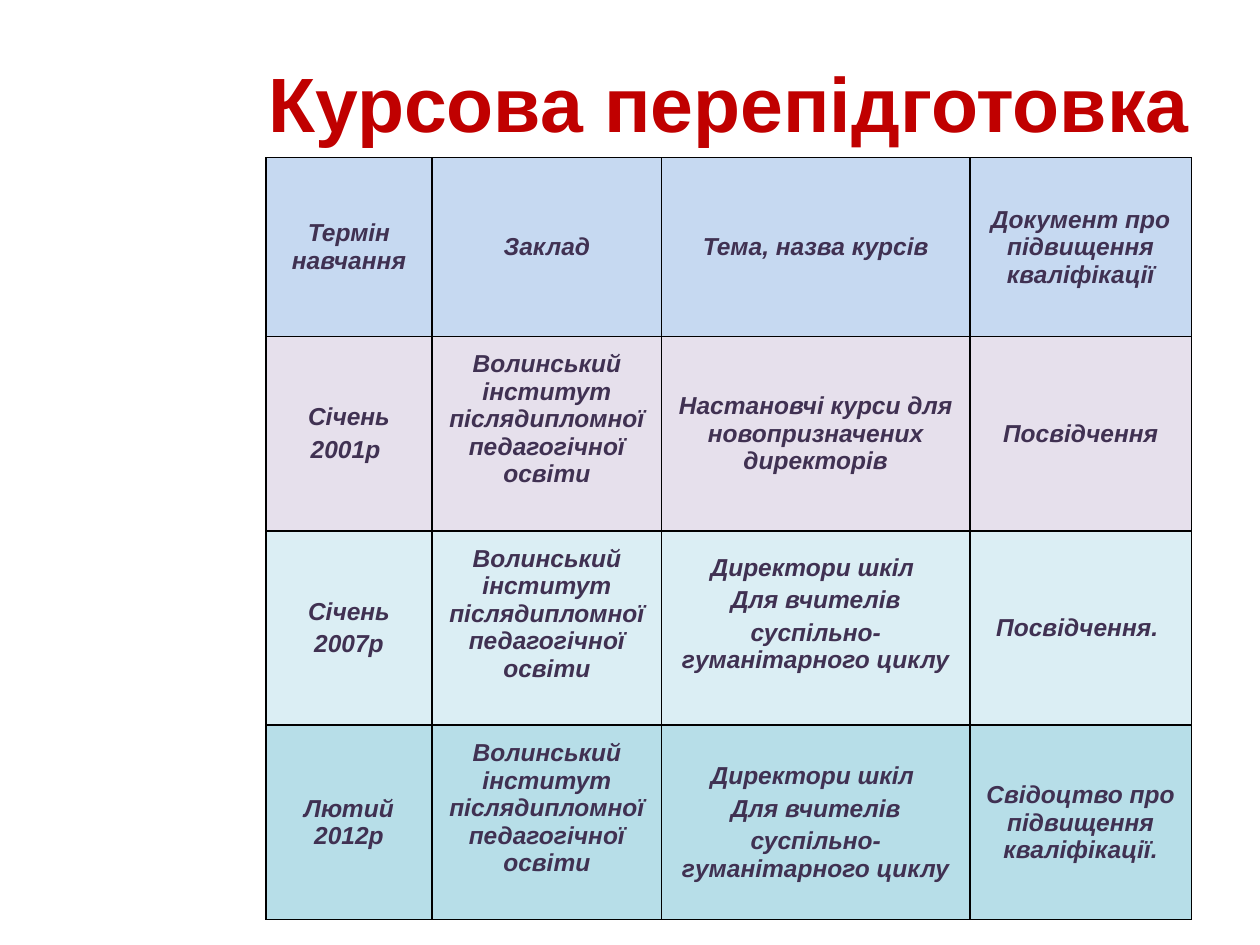
"""Build a slide with a table of professional retraining courses."""
from pptx import Presentation
from pptx.dml.color import RGBColor
from pptx.enum.text import MSO_ANCHOR as Anchor, PP_ALIGN as Align
from pptx.oxml import parse_xml
from pptx.oxml.ns import nsdecls
from pptx.util import Cm, Pt


def color(value):
    return RGBColor.from_string(value)


def style(paragraph, size, value, italic=False):
    font = paragraph.font
    font.name, font.size, font.bold, font.italic = "Arial", Pt(size), True, italic
    font.color.rgb = color(value)


institute = "Волинський інститут післядипломної педагогічної освіти"
teachers = "Директори шкіл \nДля вчителів\nсуспільно-гуманітарного циклу"
courses = [
    ("C6D9F1", ["Термін навчання", "Заклад", "Тема, назва курсів",
                "Документ про підвищення кваліфікації"]),
    ("E6E0EC", ["Січень\n2001р ", institute,
                "Настановчі курси для новопризначених директорів", "Посвідчення"]),
    ("DBEEF4", ["Січень\n2007р", institute, teachers, "Посвідчення. "]),
    ("B7DEE8", ["Лютий 2012р", institute, teachers,
                "Свідоцтво про підвищення кваліфікації."]),
]
raised_cells = [(1, 1), (2, 1), (3, 1), (2, 2)]
column_widths = [3.35, 4.63, 6.21, 4.47]
row_heights = [3.6, 3.92, 3.92, 3.92]

prs = Presentation()
prs.slide_width, prs.slide_height = Cm(25.4), Cm(19.05)
slide = prs.slides.add_slide(prs.slide_layouts[6])

heading = slide.shapes.add_textbox(Cm(5.16), Cm(0.99), Cm(19.63), Cm(2.13)).text_frame
heading.word_wrap = True
heading.text = "Курсова перепідготовка"
style(heading.paragraphs[0], 44, "C00000")

schedule = slide.shapes.add_table(
    len(row_heights), len(column_widths), Cm(5.36), Cm(3.18),
    Cm(sum(column_widths)), Cm(sum(row_heights))).table
for column, width in zip(schedule.columns, column_widths):
    column.width = Cm(width)
for row, height in zip(schedule.rows, row_heights):
    row.height = Cm(height)

for r, (background, entries) in enumerate(courses):
    for c, entry in enumerate(entries):
        cell = schedule.cell(r, c)
        cell.text = entry
        cell.vertical_anchor = Anchor.MIDDLE
        if (r, c) in raised_cells:
            cell.margin_bottom = Cm(0.7)
        for side in ("lnL", "lnR", "lnT", "lnB"):
            cell._tc.get_or_add_tcPr().append(parse_xml(
                f'<a:{side} {nsdecls("a")} w="12700"><a:solidFill>'
                f'<a:srgbClr val="000000"/></a:solidFill></a:{side}>'))
        cell.fill.solid()
        cell.fill.fore_color.rgb = color(background)
        for i, paragraph in enumerate(cell.text_frame.paragraphs):
            paragraph.alignment = Align.CENTER
            if i:
                paragraph.space_before = Pt(2.8)
            style(paragraph, 14, "403152", italic=True)

prs.save("out.pptx")
